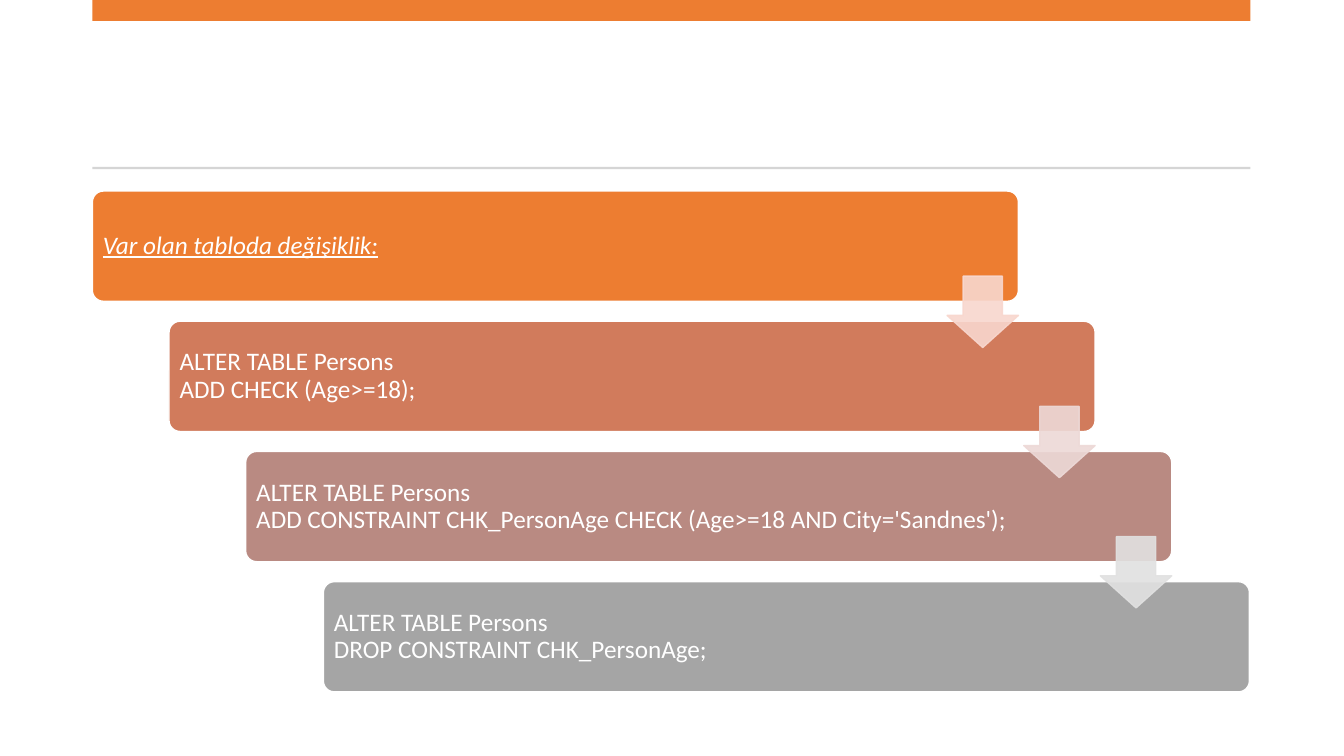
from lxml.etree import SubElement
from pptx import Presentation
from pptx.dml.color import RGBColor
from pptx.enum.shapes import MSO_SHAPE as Kind
from pptx.enum.text import MSO_ANCHOR as Anchor, PP_ALIGN as Align
from pptx.oxml.ns import qn
from pptx.util import Emu, Pt


def px(n):
    """Turn pixels into EMU."""
    return Emu(n * 9525)


def rgb(code):
    """Turn a hex string into a colour."""
    return RGBColor.from_string(code)


class Deck:
    """Hold the style and the current slide."""

    font, size, ink = "Calibri", 18, "FFFFFF"

    def __init__(self):
        """Start one blank wide slide."""
        self.prs = Presentation()
        self.prs.slide_width, self.prs.slide_height = px(1280), px(720)
        self.slide = self.prs.slides.add_slide(self.prs.slide_layouts[6])

    def shape(self, kind, box, fill, edge=None):
        """Add a flat shape with an optional outline."""
        item = self.slide.shapes.add_shape(kind, *map(px, box))
        item.shadow.inherit = False
        item.fill.solid()
        item.fill.fore_color.rgb = rgb(fill)
        if edge:
            item.line.color.rgb = rgb(edge)
            item.line.width = Pt(1)
        else:
            item.line.fill.background()
        return item

    def step(self, box, fill, lines, title=False):
        """Add a rounded step with its text."""
        item = self.shape(Kind.ROUNDED_RECTANGLE, box, fill, self.ink)
        item.adjustments[0] = 0.1
        frame = item.text_frame
        frame.word_wrap = True
        frame.vertical_anchor = Anchor.MIDDLE
        frame.margin_left = frame.margin_right = px(7)
        frame.margin_top = frame.margin_bottom = px(7)
        para = frame.paragraphs[0]
        para.alignment = Align.LEFT
        para.line_spacing = 0.9
        for i, line in enumerate(lines):
            if i:
                para.add_line_break()
            run = para.add_run()
            run.text = line
            font = run.font
            font.name, font.size = self.font, Pt(self.size)
            font.color.rgb = rgb(self.ink)
            if title:
                font.italic = font.underline = True

    def arrow(self, box, fill):
        """Add a slightly clear down arrow."""
        item = self.shape(Kind.DOWN_ARROW, box, fill, fill)
        item.adjustments[0], item.adjustments[1] = 0.55, 0.45
        for tint in item._element.spPr.iter(qn("a:srgbClr")):
            SubElement(tint, qn("a:alpha"), val="90000")


STEPS = [
    ("ED7D31", ["Var olan tabloda değişiklik:"]),
    ("D17B5C", ["ALTER TABLE Persons", "ADD CHECK (Age>=18);"]),
    ("B98A82", ["ALTER TABLE Persons",
                "ADD CONSTRAINT CHK_PersonAge CHECK (Age>=18 AND City='Sandnes');"]),
    ("A5A5A5", ["ALTER TABLE Persons", "DROP CONSTRAINT CHK_PersonAge;"]),
]
ARROWS = ["F8D7CE", "EDD9D7", "E1E1E1"]


def main():
    """Build the staircase of steps."""
    deck = Deck()
    left, top, width = 88, 182, 882
    spots = [(left + i * 220 // 3, top + i * 124) for i in range(len(STEPS))]
    deck.shape(Kind.RECTANGLE, (left, 0, 1103, 20), "ED7D31")
    deck.shape(Kind.RECTANGLE, (left, 159, 1103, 2), "D5D5D5")
    for i, ((x, y), (fill, lines)) in enumerate(zip(spots, STEPS)):
        deck.step((x, y, width, 105), fill, lines, title=i == 0)
    for (x, y), fill in zip(spots, ARROWS):
        deck.arrow((x + width - 68, y + 81, 68, 68), fill)
    deck.prs.save("out.pptx")


if __name__ == "__main__":
    main()
